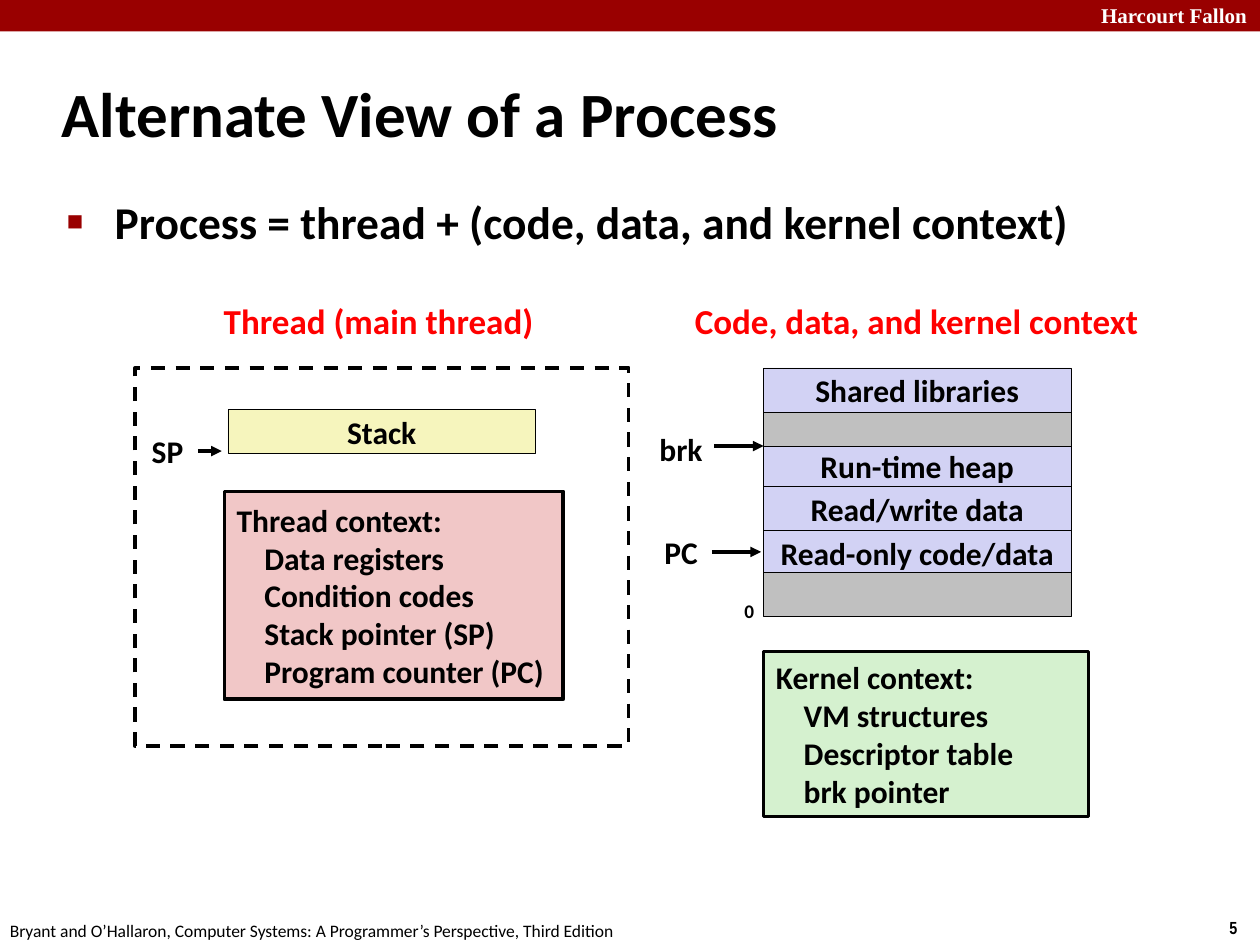
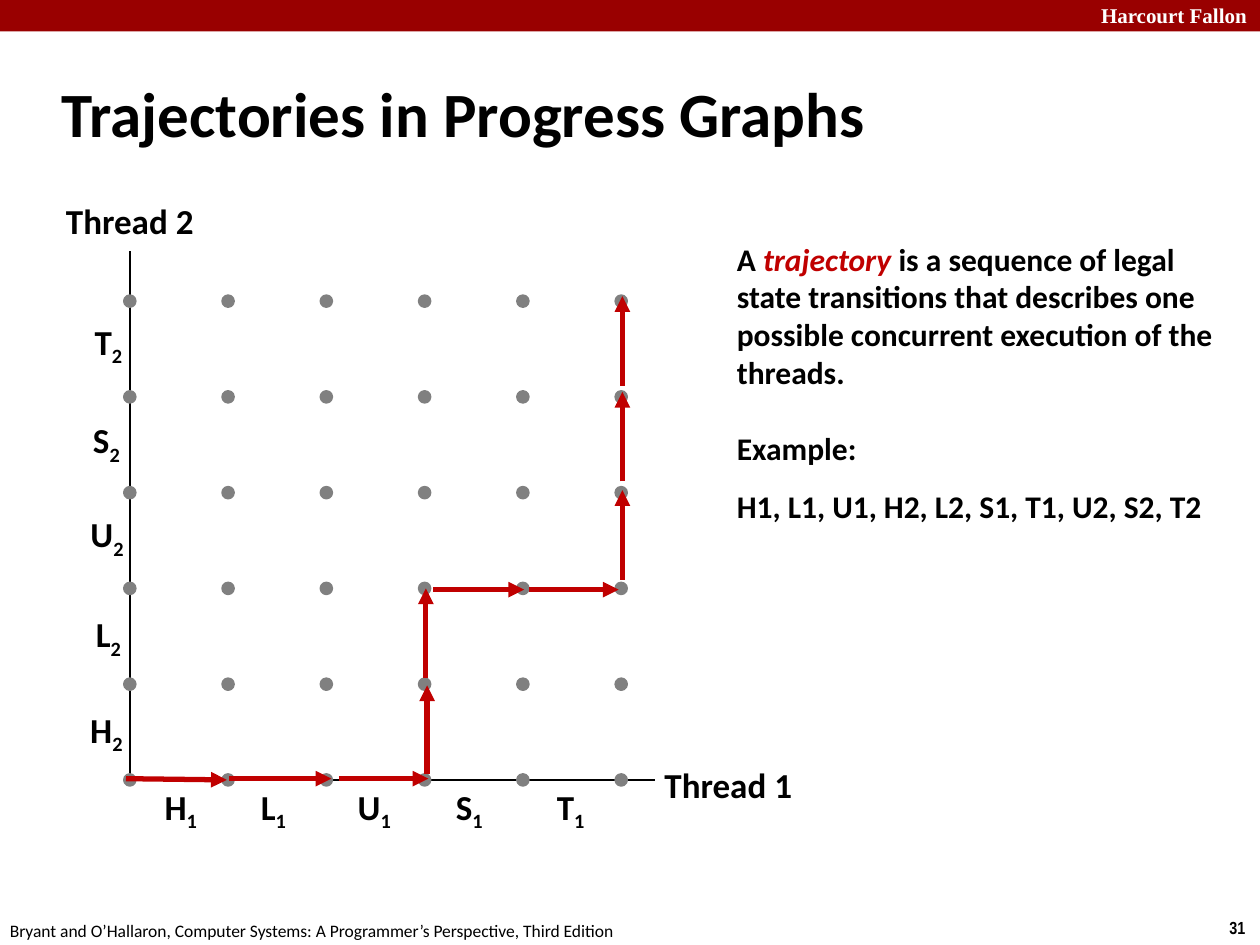
"""Build two lecture slides on threads: the process view and a progress graph."""
from lxml import etree
from pptx import Presentation
from pptx.dml.color import RGBColor
from pptx.enum.dml import MSO_LINE
from pptx.enum.shapes import MSO_CONNECTOR, MSO_SHAPE
from pptx.enum.text import MSO_ANCHOR, MSO_AUTO_SIZE, PP_ALIGN
from pptx.oxml.ns import qn
from pptx.util import Inches, Pt

RECT, OVAL = MSO_SHAPE.RECTANGLE, MSO_SHAPE.OVAL
STRAIGHT, DASH = MSO_CONNECTOR.STRAIGHT, MSO_LINE.DASH
TOP, MIDDLE = MSO_ANCHOR.TOP, MSO_ANCHOR.MIDDLE
LEFT, CENTER = PP_ALIGN.LEFT, PP_ALIGN.CENTER
NO_FIT = MSO_AUTO_SIZE.NONE

HEX = {
    "black": "000000", "white": "FFFFFF", "band": "990000", "heading": "FF0000",
    "path": "C00000", "dot": "808080", "memory": "D2D2F4", "unused": "C0C0C0",
    "stack": "F6F5BD", "thread": "F1C7C7", "kernel": "D5F1CF",
}
COLORS = {name: RGBColor.from_string(value) for name, value in HEX.items()}
BODY_FONT = "Calibri"


def add_text(s, at, lines, size=18, color="black", font=BODY_FONT, bold=True,
             align=CENTER, anchor=MIDDLE, wrap=False, fill=None, line=0.25):
    """Add a text box, or a filled rectangle, with one list of runs per line."""
    at = [Inches(v) for v in at]
    if fill:
        sp = s.shapes.add_shape(RECT, *at)
        sp.shadow.inherit = False
        sp.fill.solid()
        sp.fill.fore_color.rgb = COLORS[fill]
        sp.line.color.rgb = COLORS["black"]
        sp.line.width = Pt(line)
    else:
        sp = s.shapes.add_textbox(*at)
    tf = sp.text_frame
    tf.word_wrap = wrap
    tf.auto_size = NO_FIT
    tf.vertical_anchor = anchor
    for i, pieces in enumerate(lines):
        p = tf.add_paragraph() if i else tf.paragraphs[0]
        p.alignment = align
        for piece in pieces:
            r = p.add_run()
            r.text = piece
            r.font.name = font
            r.font.size = Pt(size)
            r.font.bold = bold
            r.font.color.rgb = COLORS[color]
    return tf


def add_line(s, start, end, color="black", width=2, arrow=True):
    """Add a straight line, with an arrowhead at its end by default."""
    c = s.shapes.add_connector(STRAIGHT, *[Inches(v) for v in (*start, *end)])
    c.line.color.rgb = COLORS[color]
    c.line.width = Pt(width)
    if arrow:
        etree.SubElement(c.line._get_or_add_ln(), qn("a:tailEnd"), type="triangle")
    etree.SubElement(c._element.spPr, qn("a:effectLst"))


prs = Presentation()
prs.slide_width, prs.slide_height = Inches(10), Inches(7.5)

slides = []
for layout, title, number in [
    (1, "Alternate View of a Process", "5"),
    (5, "Trajectories in Progress Graphs", "31"),
]:
    s = prs.slides.add_slide(prs.slide_layouts[layout])
    slides.append(s)
    band = s.shapes.add_shape(RECT, 0, 0, Inches(10), Inches(0.25))
    band.shadow.inherit = False
    band.fill.solid()
    band.fill.fore_color.rgb = COLORS["band"]
    band.line.fill.background()
    add_text(s, (8.64, -0.03, 1.43, 0.3), [["Harcourt Fallon"]], 12, "white",
             "Times New Roman", align=LEFT, anchor=TOP)
    add_text(s, (9.66, 7.23, 0.34, 0.27), [[number]], 10, font="Arial Narrow",
             align=LEFT, anchor=TOP)
    add_text(s, (-0.02, 7.25, 5.08, 0.27),
             [["Bryant and O’Hallaron, Computer Systems: "
               "A Programmer’s Perspective, Third Edition"]],
             10, bold=False, align=LEFT, anchor=TOP)
    sp = s.shapes.title
    sp.left, sp.top, sp.width, sp.height = [Inches(v) for v in (0.39, 0.48, 8.3, 0.83)]
    tf = sp.text_frame
    tf.text = title
    tf.auto_size = NO_FIT
    tf.vertical_anchor = MIDDLE
    p = tf.paragraphs[0]
    p.alignment = LEFT
    f = p.runs[0].font
    f.name, f.size, f.bold = BODY_FONT, Pt(36), True
    f.color.rgb = COLORS["black"]

process, graph = slides

sp = process.placeholders[1]
sp.left, sp.top, sp.width, sp.height = [Inches(v) for v in (0.43, 1.49, 8.64, 5.44)]
tf = sp.text_frame
tf.text = "Process = thread + (code, data, and kernel context)"
tf.auto_size = NO_FIT
p = tf.paragraphs[0]
f = p.runs[0].font
f.name, f.size, f.bold = BODY_FONT, Pt(26), True
f.color.rgb = COLORS["black"]
pPr = p._p.get_or_add_pPr()
pPr.set("marL", str(Inches(0.38)))
pPr.set("indent", str(-Inches(0.38)))
bullet_color = etree.SubElement(pPr, qn("a:buClr"))
etree.SubElement(bullet_color, qn("a:srgbClr"), val=HEX["band"])
etree.SubElement(pPr, qn("a:buSzPct"), val="60000")
etree.SubElement(pPr, qn("a:buFont"), typeface="Arial")
etree.SubElement(pPr, qn("a:buChar"), char="■")

for at, heading in [
    ((1.66, 2.32, 2.69, 0.44), "Thread (main thread)"),
    ((5.36, 2.32, 3.83, 0.44), "Code, data, and kernel context"),
]:
    add_text(process, at, [[heading]], 20, "heading")

for top, height, fill, region in [
    (2.92, 0.35, "memory", "Shared libraries"),
    (3.27, 0.28, "unused", ""),
    (3.54, 0.32, "memory", "Run-time heap"),
    (3.86, 0.35, "memory", "Read/write data"),
    (4.21, 0.35, "memory", "Read-only code/data"),
    (4.54, 0.35, "unused", ""),
]:
    add_text(process, (6.06, top, 2.44, height), [[region]] if region else [], fill=fill)
add_text(process, (1.81, 3.25, 2.44, 0.35), [["Stack"]], fill="stack")
add_text(process, (5.81, 4.71, 0.28, 0.29), [["0"]], 11, align=LEFT, anchor=TOP)

for at, fill, lines in [
    ((1.78, 3.9, 2.69, 1.65), "thread",
     ["Thread context:", "Data registers", "Condition codes",
      "Stack pointer (SP)", "Program counter (PC)"]),
    ((6.06, 5.17, 2.58, 1.31), "kernel",
     ["Kernel context:", "VM structures", "Descriptor table", "brk pointer"]),
]:
    tf = add_text(process, at, [[text] for text in lines], align=LEFT,
                  wrap=True, fill=fill, line=2)
    tf.margin_right = 0
    for p in tf.paragraphs[1:]:
        p._p.get_or_add_pPr().set("marL", str(Inches(0.22)))

for at, pointer, start, end in [
    ((1.1, 3.38, 0.46, 0.4), "SP", (1.57, 3.58), (1.76, 3.58)),
    ((5.17, 4.18, 0.47, 0.4), "PC", (5.65, 4.38), (6.04, 4.38)),
    ((5.13, 3.36, 0.55, 0.4), "brk", (5.67, 3.54), (6.06, 3.54)),
]:
    add_text(process, at, [[pointer]])
    add_line(process, start, end)

frame = process.shapes.add_shape(RECT, Inches(1.07), Inches(2.92), Inches(3.92), Inches(3))
frame.shadow.inherit = False
frame.fill.background()
frame.line.color.rgb = COLORS["black"]
frame.line.width = Pt(2)
frame.line.dash_style = DASH

tf = add_text(graph, (5.75, 1.84, 4.17, 2.39), [
    ["A ", "trajectory", " is a sequence of legal state transitions that describes "
     "one possible concurrent execution of the threads."],
    ["Example:"],
    ["H1, L1, U1, H2, L2, S1, T1, U2, S2, T2"],
], align=LEFT, wrap=True)
term = tf.paragraphs[0].runs[1].font
term.italic = True
term.color.rgb = COLORS["path"]
tf.paragraphs[1].space_before = Pt(21.6)
tf.paragraphs[2].space_before = Pt(12)

origin = (1.03, 6.19)
for end in [(5.2, 6.19), (1.03, 1.99)]:
    add_line(graph, origin, end, width=1, arrow=False)
add_text(graph, (5.17, 6.01, 1.22, 0.44), [["Thread 1"]], 20)
add_text(graph, (0.42, 1.53, 1.22, 0.44), [["Thread 2"]], 20)

for step, width, across, left, top in [
    ("H", 0.47, 1.2, 0.61, 5.59),
    ("L", 0.42, 1.96, 0.65, 4.83),
    ("U", 0.48, 2.73, 0.61, 4.04),
    ("S", 0.43, 3.51, 0.63, 3.29),
    ("T", 0.44, 4.31, 0.64, 2.51),
]:
    for thread, x, y in [("1", across, 6.2), ("2", left, top)]:
        tf = add_text(graph, (x, y, width, 0.44), [[step, thread]], 20)
        r = tf.paragraphs[0].runs[1]
        r._r.get_or_add_rPr().set("baseline", "-25000")

for col in range(6):
    column = graph.shapes.add_group_shape()
    for row in range(6):
        dot = column.shapes.add_shape(OVAL, Inches(0.99 + 0.78 * col),
                                      Inches(6.15 - 0.76 * row), Inches(0.08), Inches(0.08))
        dot.shadow.inherit = False
        dot.fill.solid()
        dot.fill.fore_color.rgb = COLORS["dot"]
        dot.line.color.rgb = COLORS["dot"]
        dot.line.width = Pt(2)

for start, end in [
    ((1, 6.18), (1.8, 6.19)),
    ((1.82, 6.18), (2.63, 6.18)),
    ((2.69, 6.18), (3.4, 6.18)),
    ((3.39, 6.14), (3.39, 5.44)),
    ((3.38, 5.38), (3.38, 4.67)),
    ((3.44, 4.68), (4.16, 4.68)),
    ((4.2, 4.68), (4.91, 4.68)),
    ((4.94, 4.6), (4.94, 3.89)),
    ((4.94, 3.82), (4.94, 3.11)),
    ((4.94, 3.06), (4.94, 2.35)),
]:
    add_line(graph, start, end, "path", 3)

prs.save("out.pptx")
